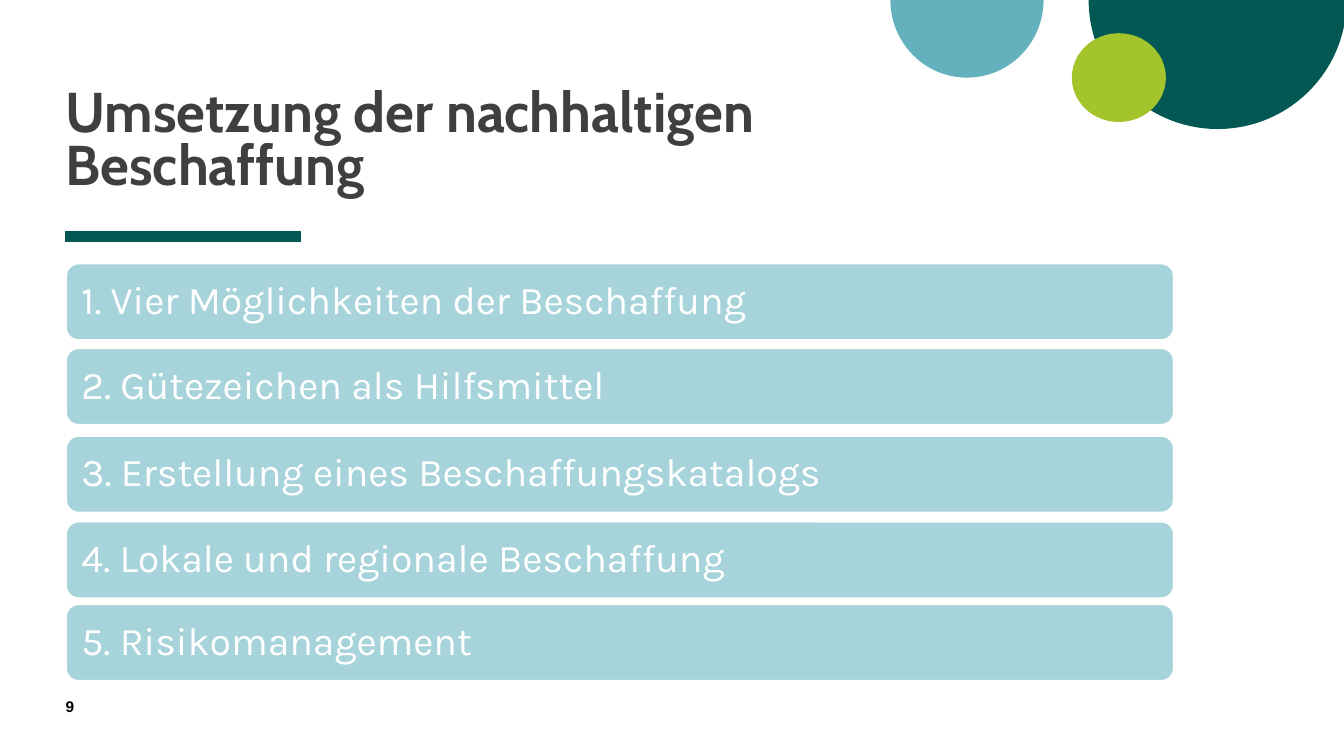
from lxml import etree
from pptx import Presentation
from pptx import util as u
from pptx.dml import color
from pptx.enum import shapes, text
from pptx.oxml import ns

COLORS = {
    "pine": "035854",
    "teal": "64B1BE",
    "lime": "A3C42A",
    "card": "A7D3DA",
    "white": "FFFFFF",
    "title": "3F3F3F",
    "black": "000000",
}
FORMATS = {
    "title": {"name": "Cabin", "size": u.Pt(40), "bold": True},
    "card": {"name": "Karla", "size": u.Pt(28), "bold": False},
    "number": {"name": "Arial", "size": u.Pt(11), "bold": True},
}
TOPICS = {
    "1. Vier Möglichkeiten der Beschaffung": 10.44,
    "2. Gütezeichen als Hilfsmittel": 13.8,
    "3. Erstellung eines Beschaffungskatalogs": 17.28,
    "4. Lokale und regionale Beschaffung": 20.68,
    "5. Risikomanagement": 23.96,
}
COLUMNS, ROWS = 40, 30
MARGIN = 1.95


class SlideBuilder:
    def __init__(self, deck):
        self.page = deck.slides.add_slide(deck.slide_layouts[6])
        self.column = deck.slide_width / COLUMNS
        self.row = deck.slide_height / ROWS

    def place(self, left, top, width, height):
        return (round(left * self.column), round(top * self.row),
                round(width * self.column), round(height * self.row))

    def color(self, name):
        return color.RGBColor.from_string(COLORS[name])

    def shape(self, kind, area, fill, adjustments=()):
        shape = self.page.shapes.add_shape(kind, *self.place(*area))
        shape.shadow.inherit = False
        shape.fill.solid()
        shape.fill.fore_color.rgb = self.color(fill)
        shape.line.fill.background()
        for index, value in enumerate(adjustments):
            shape.adjustments[index] = value
        return shape

    def rule(self, left, right, row, ink, weight):
        start, level, length, _ = self.place(left, row, right - left, 0)
        line = self.page.shapes.add_connector(
            shapes.MSO_CONNECTOR.STRAIGHT, start, level, start + length, level)
        line.line.color.rgb = self.color(ink)
        line.line.width = u.Pt(weight)
        etree.SubElement(line._element.spPr, ns.qn("a:effectLst"))

    def fill_text(self, box, words, style, ink, anchor, spacing=1.0, inset=0):
        frame = box.text_frame
        layout = {"word_wrap": True, "vertical_anchor": anchor,
                  "margin_left": u.Inches(inset), "margin_right": u.Inches(inset),
                  "margin_top": 0, "margin_bottom": 0}
        for name, value in layout.items():
            setattr(frame, name, value)
        para = frame.paragraphs[0]
        para.alignment = text.PP_ALIGN.LEFT
        para.line_spacing = spacing
        span = para.add_run()
        span.text = words
        for name, value in FORMATS[style].items():
            setattr(span.font, name, value)
        span.font.color.rgb = self.color(ink)

    def label(self, words, area, style, ink, anchor, spacing=1.0):
        box = self.page.shapes.add_textbox(*self.place(*area))
        self.fill_text(box, words, style, ink, anchor, spacing)

    def card(self, words, top):
        box = self.shape(shapes.MSO_SHAPE.ROUNDED_RECTANGLE,
                         (MARGIN, top, 33, 3.08), "card", [0.167])
        box.line.color.rgb = self.color("white")
        box.line.width = u.Pt(2)
        self.fill_text(box, words, "card", "white", text.MSO_ANCHOR.MIDDLE, 0.9, 0.12)


def main():
    deck = Presentation()
    deck.slide_width, deck.slide_height = u.Inches(13.33), u.Inches(7.5)
    slide = SlideBuilder(deck)

    half = [0, 108]
    slide.shape(shapes.MSO_SHAPE.PIE, (32.4, -5.12, 7.68, 10.24), "pine", half)
    slide.rule(MARGIN, 8.95, 9.4, "pine", 8)
    slide.shape(shapes.MSO_SHAPE.PIE, (26.5, -3.08, 4.56, 6.16), "teal", half)
    slide.shape(shapes.MSO_SHAPE.OVAL, (31.9, 1.32, 2.8, 3.52), "lime")
    slide.label("Umsetzung der nachhaltigen Beschaffung", (MARGIN, 0.84, 25.2, 6.96),
                "title", "title", text.MSO_ANCHOR.BOTTOM, 0.8)
    for words, top in TOPICS.items():
        slide.card(words, top)
    slide.label("9", (MARGIN, 27.68, 1.7, 1.08), "number", "black",
                text.MSO_ANCHOR.TOP)

    deck.save("out.pptx")


if __name__ == "__main__":
    main()
